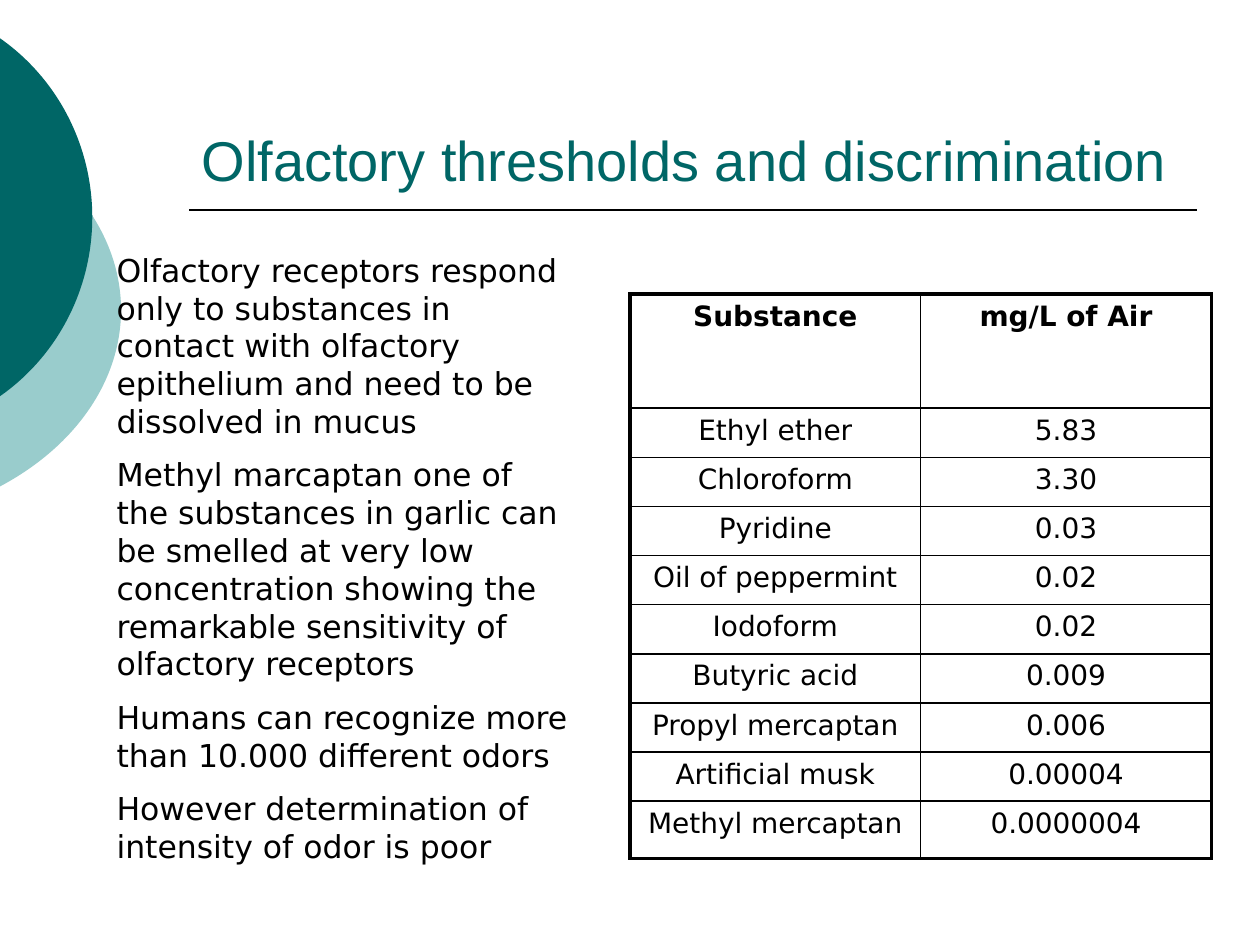
from lxml import etree
from pptx import Presentation, util as u
from pptx.dml.color import RGBColor
from pptx.enum import shapes, text
from pptx.oxml import ns

TEAL = RGBColor(0x00, 0x66, 0x66)
PALE_TEAL = RGBColor(0x99, 0xCC, 0xCC)
BLACK = RGBColor(0x00, 0x00, 0x00)

TITLE = dict(name="Arial", size=u.Pt(32))
BODY = dict(name="DejaVu Sans", size=u.Pt(18))
CELL = dict(name="DejaVu Sans", size=u.Pt(16), bold=False)
HEADER = dict(CELL, bold=True)
INNER, OUTER = u.Pt(1), u.Pt(2.25)

POINTS = [
    "Olfactory receptors respond only to substances in contact with olfactory "
    "epithelium and need to be dissolved in mucus",
    "Methyl marcaptan one of the substances in garlic can be smelled at very low "
    "concentration showing the remarkable sensitivity of olfactory receptors",
    "Humans can recognize more than 10.000 different odors",
    "However determination of intensity of odor is poor",
]
THRESHOLDS = [
    ("Substance", "mg/L of Air"),
    ("Ethyl ether", "5.83"),
    ("Chloroform", "3.30"),
    ("Pyridine", "0.03"),
    ("Oil of peppermint", "0.02"),
    ("Iodoform", "0.02"),
    ("Butyric acid", "0.009"),
    ("Propyl mercaptan", "0.006"),
    ("Artificial musk", "0.00004"),
    ("Methyl mercaptan", "0.0000004"),
]


class OdorSlide:
    def __init__(self, deck):
        self.slide = deck.slides.add_slide(deck.slide_layouts[5])
        self.shapes = self.slide.shapes

    def format(self, paragraph, style, color=BLACK):
        for key, value in style.items():
            setattr(paragraph.font, key, value)
        paragraph.font.color.rgb = color

    def disc(self, left, top, width, height, color):
        disc = self.shapes.add_shape(
            shapes.MSO_SHAPE.OVAL, *map(u.Cm, (left, top, width, height)))
        disc.shadow.inherit = False
        disc.fill.solid()
        disc.fill.fore_color.rgb = color
        disc.line.fill.background()

    def rule(self, left, right, y):
        rule = self.shapes.add_connector(
            shapes.MSO_CONNECTOR.STRAIGHT, u.Cm(left), u.Cm(y), u.Cm(right), u.Cm(y))
        rule.line.color.rgb = BLACK
        rule.line.width = u.Pt(1)
        etree.SubElement(rule._element.spPr, ns.qn("a:effectLst"))

    def title(self, wording, left, top, width, height):
        title = self.shapes.title
        title.left, title.top, title.width, title.height = map(
            u.Cm, (left, top, width, height))
        frame = title.text_frame
        frame.text = wording
        frame.vertical_anchor = text.MSO_ANCHOR.BOTTOM
        frame.paragraphs[0].alignment = text.PP_ALIGN.LEFT
        self.format(frame.paragraphs[0], TITLE, TEAL)

    def body(self, points, left, top, width, height):
        frame = self.shapes.add_textbox(
            *map(u.Cm, (left, top, width, height))).text_frame
        frame.word_wrap = True
        for i, point in enumerate(points):
            paragraph = frame.add_paragraph() if i else frame.paragraphs[0]
            paragraph.text = point
            if i:
                paragraph.space_before = u.Pt(9)
            self.format(paragraph, BODY)

    def borders(self, cell, widths):
        props = cell._tc.get_or_add_tcPr()
        for side, width in widths.items():
            line = etree.SubElement(props, ns.qn("a:ln" + side), w=str(width))
            fill = etree.SubElement(line, ns.qn("a:solidFill"))
            etree.SubElement(fill, ns.qn("a:srgbClr"), val=str(BLACK))

    def table(self, rows, left, top, column_width, heights):
        columns = len(rows[0])
        table = self.shapes.add_table(
            len(rows), columns, u.Cm(left), u.Cm(top),
            u.Cm(column_width * columns), u.Cm(sum(heights))).table
        for column in table.columns:
            column.width = u.Cm(column_width)
        for r, values in enumerate(rows):
            table.rows[r].height = u.Cm(heights[r])
            for c, value in enumerate(values):
                cell = table.cell(r, c)
                cell.text = value
                paragraph = cell.text_frame.paragraphs[0]
                paragraph.alignment = text.PP_ALIGN.CENTER
                self.format(paragraph, CELL if r else HEADER)
                at_edge = dict(L=c == 0, R=c == columns - 1,
                               T=r == 0, B=r == len(rows) - 1)
                self.borders(cell, {side: OUTER if edge else INNER
                                    for side, edge in at_edge.items()})
                cell.fill.background()


def main():
    deck = Presentation()
    deck.slide_width, deck.slide_height = u.Cm(25.4), u.Cm(19.05)
    page = OdorSlide(deck)

    # Discs bleeding off the left edge, and title
    page.disc(-8.99, 1.91, 11.43, 8.68, PALE_TEAL)
    page.disc(-6.73, 0, 8.59, 8.76, TEAL)
    page.rule(3.81, 24.13, 4.24)
    page.title("Olfactory thresholds and discrimination", 3.81, 0.84, 20.32, 3.18)

    # Threshold table and explanation
    page.table(THRESHOLDS, 12.7, 5.93, 5.86, [2.3] + [0.99] * 8 + [1.16])
    page.body(POINTS, 2.1, 4.93, 9.6, 13.61)

    deck.save("out.pptx")


if __name__ == "__main__":
    main()
